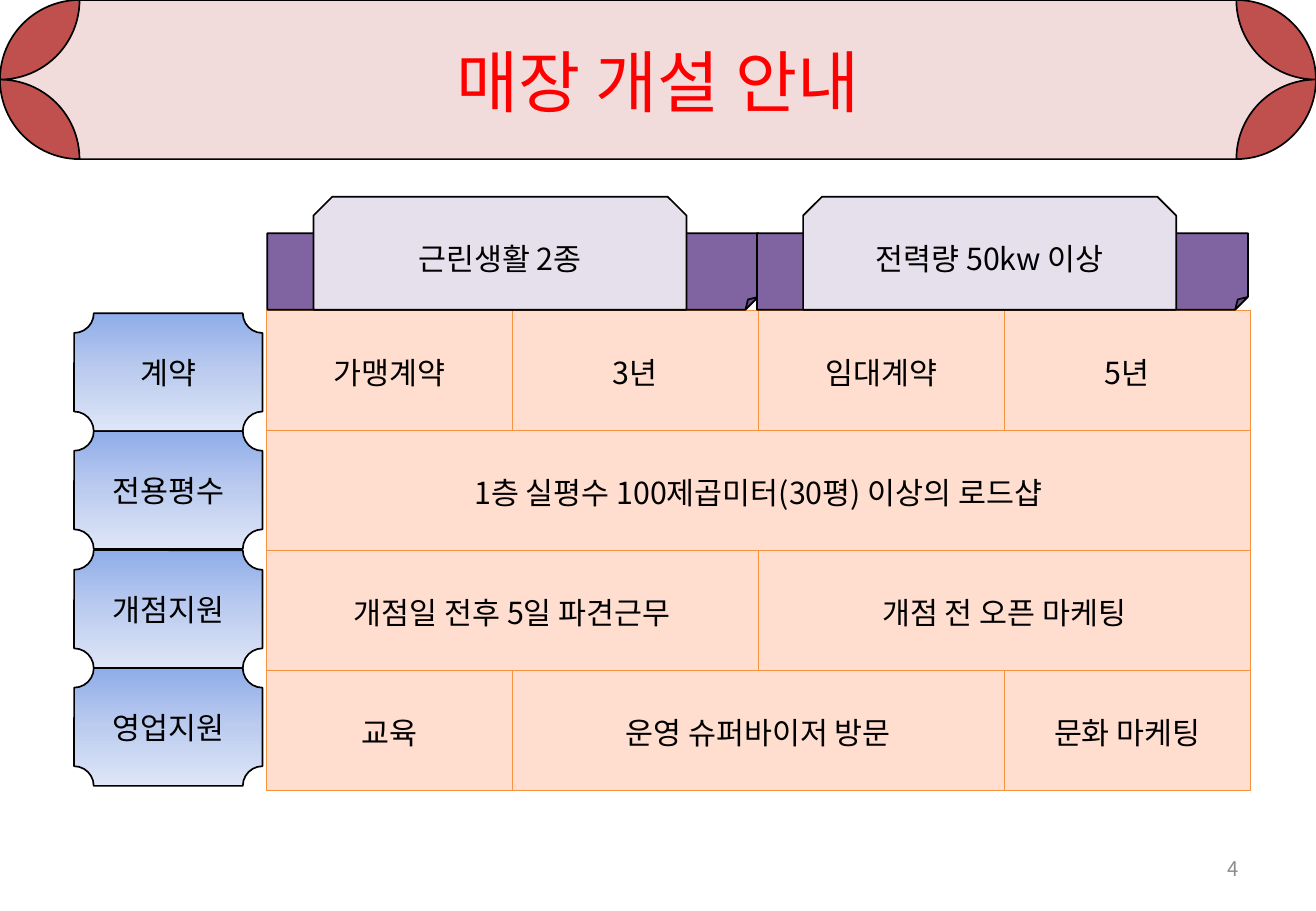
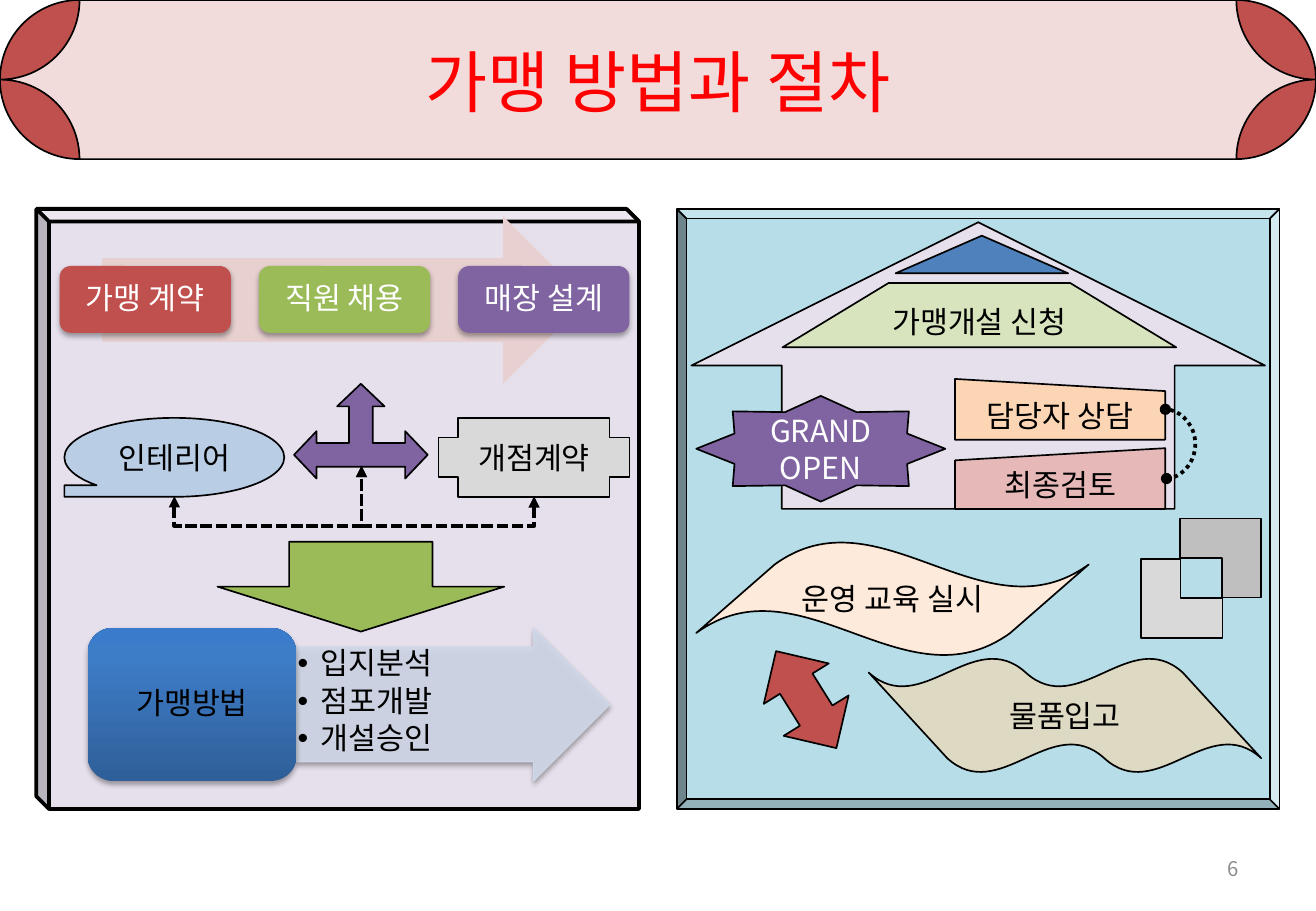
from dataclasses import dataclass

from pptx import Presentation
from pptx import util as u
from pptx.dml import color as dc
from pptx.enum import dml, shapes, text
from pptx.oxml import parse_xml, ns

G = shapes.MSO_SHAPE
ALIGN = text.PP_ALIGN
MID = text.MSO_ANCHOR.MIDDLE
NS = ns.nsdecls("a")


@dataclass(frozen=True)
class Theme:
    face: str = "Noto Sans CJK KR"
    head: int = 40
    body: int = 18
    foot: int = 12
    ink: str = "000000"
    white: str = "FFFFFF"
    title: str = "FF0000"
    gray: str = "8C8C8C"
    red: str = "C0504D"
    pink: str = "F2DCDB"
    violet: str = "8064A2"
    lilac: str = "E6E0EC"
    green: str = "9BBB59"
    lime: str = "D7E4BD"
    blue: str = "4F81BD"
    sky: str = "B9CDE5"
    aqua: str = "B7DEE8"
    mist: str = "D0D8E8"
    blush: str = "E8D0D0"
    peach: str = "FCD5B5"
    rose: str = "E6B9B8"
    cream: str = "FDEADA"
    sand: str = "DDD9C3"
    pale: str = "D9D9D9"
    silver: str = "BFBFBF"
    cell: str = "FFDDCF"
    edge: str = "F69240"
    tab: tuple = (90, (0, "8FADE9"), (50, "BCCCEF"), (100, "DEE6F7"))
    deep: tuple = (270, (0, "2F5F99"), (80, "3D7CC7"), (100, "3A7CCB"))


T = Theme()


def px(n):
    return u.Emu(n * 9144)


def rgb(code):
    return dc.RGBColor.from_string(code)


def say(frame, words, size=T.body, color=T.ink, align=ALIGN.CENTER,
        anchor=MID, inset=None, lead=None, after=0, bullet=None):
    frame.word_wrap = True
    frame.auto_size = text.MSO_AUTO_SIZE.NONE
    frame.vertical_anchor = anchor
    if inset is not None:
        frame.margin_left = frame.margin_right = px(inset)
        frame.margin_top = frame.margin_bottom = px(inset)
    for i, line in enumerate(words.split("\n")):
        para = frame.paragraphs[0] if i == 0 else frame.add_paragraph()
        para.alignment = align
        para.space_before = u.Pt(0)
        para.space_after = u.Pt(after)
        if lead:
            para.line_spacing = lead
        if bullet:
            para.level = 1
            props = para._p.get_or_add_pPr()
            props.set("marL", str(px(19)))
            props.set("indent", str(px(-19)))
            props.append(parse_xml(f'<a:buFont {NS} typeface="Arial"/>'))
            props.append(parse_xml(f'<a:buChar {NS} char="{bullet}"/>'))
        run = para.add_run()
        run.text = line
        style(run, size, color)


def style(run, size, color):
    run.font.size = u.Pt(size)
    run.font.name = T.face
    run.font.color.rgb = rgb(color)
    run.font._element.append(parse_xml(f'<a:ea {NS} typeface="{T.face}"/>'))


def flip(item, way):
    frame = item._element.spPr.find(ns.qn("a:xfrm"))
    for axis in way:
        frame.set("flip" + axis.upper(), "1")
    return frame


def blend(item, angle, *stops):
    marks = "".join(f'<a:gs pos="{at * 1000}"><a:srgbClr val="{code}"/></a:gs>'
                    for at, code in stops)
    item._element.spPr.insert(2, parse_xml(
        f'<a:gradFill {NS} rotWithShape="1"><a:gsLst>{marks}</a:gsLst>'
        f'<a:lin ang="{angle * 60000}" scaled="0"/></a:gradFill>'))


def shade(item):
    item._element.spPr.find(ns.qn("a:effectLst")).append(parse_xml(
        f'<a:outerShdw {NS} blurRad="40000" dist="23000" dir="5400000" '
        'rotWithShape="0"><a:srgbClr val="000000"><a:alpha val="35000"/>'
        '</a:srgbClr></a:outerShdw>'))


def fade(item, part):
    for tint in item._element.spPr.iter(ns.qn("a:srgbClr")):
        tint.append(parse_xml(f'<a:alpha {NS} val="{part * 1000}"/>'))


class Deck:
    def __init__(self, wide, high):
        self.prs = Presentation()
        self.prs.slide_width, self.prs.slide_height = px(wide), px(high)
        self.slide = None

    def bands(self):
        tree = self.prs.slide_master.shapes._spTree
        for i, (kind, fill) in enumerate(((G.ROUNDED_RECTANGLE, T.red),
                                          (G.PLAQUE, T.pink))):
            band = self.shape(kind, (0, 0, 1083, 131), fill, adj=[0.5])
            tree.insert(2 + i, band._element)

    def page(self, title, number, layout):
        first = self.slide is None
        self.slide = self.prs.slides.add_slide(self.prs.slide_layouts[layout])
        if first:
            self.bands()
        head = self.slide.shapes.title
        self.place(head, (54, 4, 975, 125))
        say(head.text_frame, title, size=T.head, color=T.title)
        foot = self.slide.shapes.add_textbox(*map(px, (776, 695, 253, 40)))
        say(foot.text_frame, number, size=T.foot, color=T.gray,
            align=ALIGN.RIGHT)

    def place(self, item, box):
        item.left, item.top, item.width, item.height = map(px, box)

    def shape(self, kind, box, fill, words=None, line=T.ink, width=1,
              adj=(), way="", turn=0, drop=False, clear=None, **form):
        item = self.slide.shapes.add_shape(kind, *map(px, box))
        item.shadow.inherit = False
        for i, value in enumerate(adj):
            item.adjustments[i] = value
        item.rotation = turn
        flip(item, way)
        if isinstance(fill, tuple):
            blend(item, *fill)
        else:
            item.fill.solid()
            item.fill.fore_color.rgb = rgb(fill)
        if line:
            item.line.color.rgb = rgb(line)
            item.line.width = u.Pt(width)
        else:
            item.line.fill.background()
        if clear:
            fade(item, clear)
        if drop:
            shade(item)
        if words:
            say(item.text_frame, words, **form)
        return item

    def link(self, kind, box, adj, dash, end, way="", turn=0):
        x, y, w, h = box
        item = self.slide.shapes.add_connector(
            kind, *map(px, (x, y, x + w, y + h)))
        flip(item, way).set("rot", str(turn * 60000))
        props = item._element.spPr
        guides = props.find(ns.qn("a:prstGeom")).get_or_add_avLst()
        guides.append(parse_xml(
            f'<a:gd {NS} name="adj1" fmla="val {round(adj * 100000)}"/>'))
        item.line.color.rgb = rgb(T.ink)
        item.line.width = u.Pt(2.25)
        item.line.dash_style = dash
        for tip in ("headEnd", "tailEnd"):
            item.line._get_or_add_ln().append(
                parse_xml(f'<a:{tip} {NS} type="{end}"/>'))
        props.append(parse_xml(f'<a:effectLst {NS}/>'))

    def bullets(self, box, words):
        body = self.slide.placeholders[1]
        self.slide.shapes._spTree.append(body._element)
        self.place(body, box)
        say(body.text_frame, words, align=ALIGN.LEFT, inset=1, lead=0.9,
            after=2.7, bullet="•", anchor=text.MSO_ANCHOR.TOP)

    def table(self, box, rows):
        count = sum(span for _, span in rows[0])
        grid = self.slide.shapes.add_table(
            len(rows), count, *map(px, box)).table
        for r, row in enumerate(rows):
            c = 0
            for words, span in row:
                cell = grid.cell(r, c)
                if span > 1:
                    cell.merge(grid.cell(r, c + span - 1))
                say(cell.text_frame, words)
                c += span
        for cell in grid.iter_cells():
            cell.vertical_anchor = MID
            self.rule(cell)
            cell.fill.solid()
            cell.fill.fore_color.rgb = rgb(T.cell)

    def rule(self, cell):
        props = cell._tc.get_or_add_tcPr()
        for side in "LRTB":
            props.append(parse_xml(
                f'<a:ln{side} {NS} w="9525"><a:solidFill><a:srgbClr '
                f'val="{T.edge}"/></a:solidFill></a:ln{side}>'))


def guide(deck):
    deck.page("매장 개설 안내", "4", 5)
    deck.table((219, 256, 810, 395), [
        [("가맹계약", 1), ("3년", 1), ("임대계약", 1), ("5년", 1)],
        [("1층 실평수 100제곱미터(30평) 이상의 로드샵", 4)],
        [("개점일 전후 5일 파견근무", 2), ("개점 전 오픈 마케팅", 2)],
        [("교육", 1), ("운영 슈퍼바이저 방문", 2), ("문화 마케팅", 1)]])
    for i, words in enumerate(("근린생활 2종", "전력량 50kw 이상")):
        x = 220 + 403 * i
        deck.shape(G.FOLDED_CORNER, (x, 192, 404, 63), T.violet)
        deck.shape(G.SNIP_2_SAME_RECTANGLE, (x + 38, 162, 307, 93), T.lilac,
                   words)
    for i, words in enumerate(("계약", "전용평수", "개점지원", "영업지원")):
        deck.shape(G.PLAQUE, (61, 258 + round(97.3 * i), 155, 97), T.tab,
                   words)


def opening(deck):
    deck.shape(G.BEVEL, (557, 172, 496, 494), T.aqua, adj=[0.016], way="h")
    deck.shape(G.UP_ARROW, (569, 183, 472, 236), T.lilac, adj=[0.685, 0.5])
    deck.shape(G.ISOSCELES_TRIANGLE, (737, 194, 142, 31), T.blue)
    deck.shape(G.TRAPEZOID, (644, 233, 324, 53), T.lime, "가맹개설 신청",
               adj=[1.648])
    deck.shape(G.FLOWCHART_MANUAL_INPUT, (786, 312, 173, 50), T.peach,
               "담당자 상담", way="h")
    deck.shape(G.FLOWCHART_MANUAL_INPUT, (786, 369, 173, 50), T.rose,
               "최종검토")
    deck.link(shapes.MSO_CONNECTOR.CURVE, (959, 337, 1, 57), 25,
              dml.MSO_LINE.ROUND_DOT, "oval")
    deck.shape(G.WAVE, (573, 446, 323, 94), T.cream, "운영 교육 실시",
               adj=[0.2, -0.1])
    deck.shape(G.DOUBLE_WAVE, (715, 542, 323, 94), T.sand, "물품입고",
               adj=[0.125, -0.1], way="h")
    deck.shape(G.CORNER, (939, 460, 67, 65), T.pale)
    deck.shape(G.CORNER, (971, 427, 67, 65), T.silver, way="hv")
    deck.shape(G.UP_DOWN_ARROW, (632, 529, 63, 94), T.red, adj=[0.096, 0.5],
               turn=328.1)
    deck.shape(G.STAR_8_POINT, (573, 326, 205, 87), T.violet, "GRAND\nOPEN",
               adj=[0.375], color=T.white)


def joining(deck):
    deck.shape(G.CUBE, (30, 172, 496, 494), T.lilac, width=2.25, adj=[0.021],
               way="h")
    deck.shape(G.RIGHT_ARROW, (244, 517, 258, 126), T.mist, line=T.mist,
               width=0.75, adj=[0.75, 0.5], clear=90, drop=True)
    deck.bullets((244, 533, 211, 94), "입지분석\n점포개발\n개설승인")
    deck.shape(G.ROUNDED_RECTANGLE, (72, 517, 172, 126), T.deep, "가맹방법",
               line=None, drop=True, inset=7, lead=0.9)
    deck.shape(G.RIGHT_ARROW, (84, 178, 399, 138), T.blush, line=None)
    steps = (("가맹 계약", T.red), ("직원 채용", T.green),
             ("매장 설계", T.violet))
    for i, (words, fill) in enumerate(steps):
        deck.shape(G.ROUNDED_RECTANGLE, (49 + 164 * i, 219, 141, 55), fill,
                   words, line=None, drop=True, color=T.white, inset=7,
                   lead=0.9)
    deck.shape(G.FLOWCHART_SEQUENTIAL_ACCESS_STORAGE, (53, 344, 181, 65),
               T.sky, "인테리어", way="h")
    deck.shape(G.CROSS, (361, 344, 157, 65), T.pale, "개점계약")
    deck.shape(G.LEFT_RIGHT_UP_ARROW, (242, 316, 110, 78), T.violet,
               adj=[0.25, 0.25, 0.238])
    for box, way in (((208, 319, 25, 154), "hv"), ((356, 325, 25, 142), "h")):
        deck.link(shapes.MSO_CONNECTOR.ELBOW, box, -0.98,
                  dml.MSO_LINE.SQUARE_DOT, "triangle", way, 90)
    deck.shape(G.DOWN_ARROW, (179, 446, 236, 74), T.green)


def main():
    deck = Deck(1083, 750)
    guide(deck)
    deck.page("가맹 방법과 절차", "6", 1)
    opening(deck)
    joining(deck)
    deck.prs.save("out.pptx")


if __name__ == "__main__":
    main()
